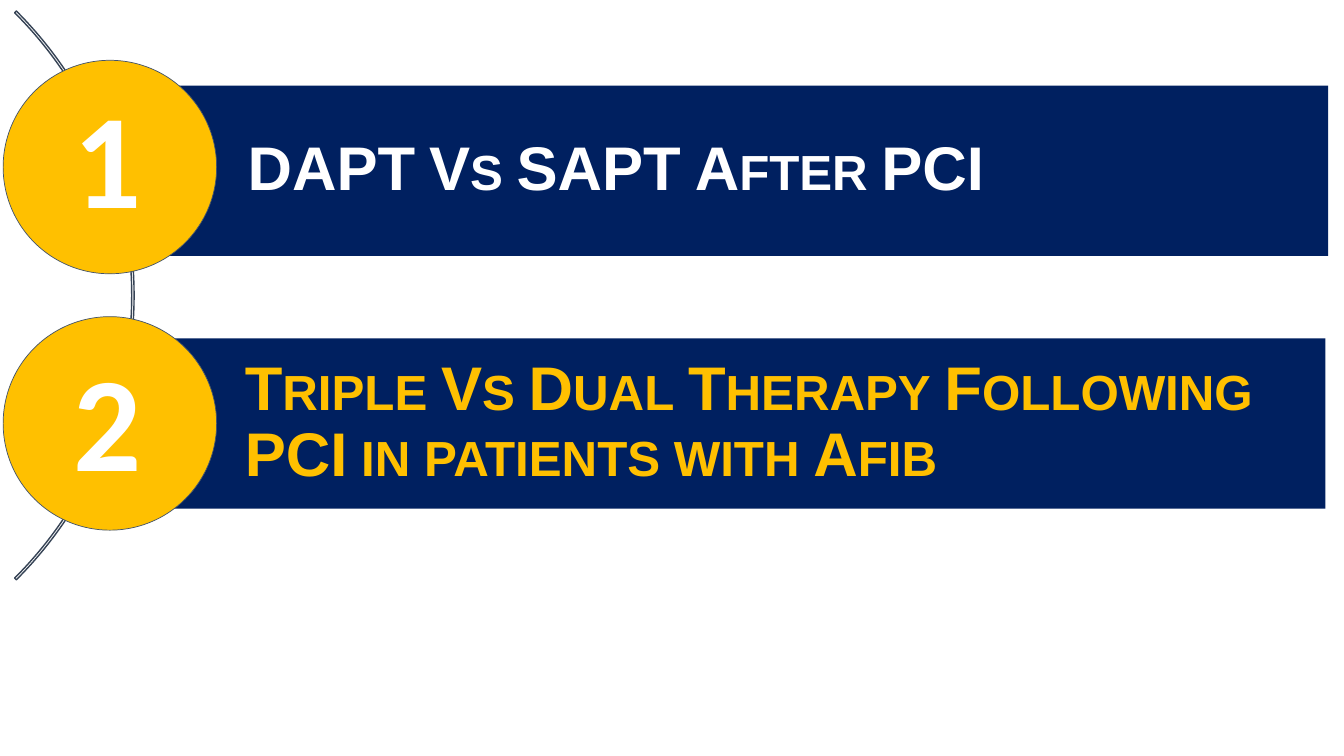
from dataclasses import dataclass

from pptx import Presentation
from pptx.dml.color import RGBColor
from pptx.enum.shapes import MSO_SHAPE
from pptx.enum.text import MSO_ANCHOR, PP_ALIGN
from pptx.shapes.autoshape import Shape
from pptx.slide import Slide
from pptx.text.text import TextFrame
from pptx.util import Cm, Pt

NAVY, GOLD, WHITE = "002060", "FFC000", "FFFFFF"
SLATE, STEEL = "44546A", "364355"


@dataclass
class Topic:
    mark: str
    title: str
    color: str
    left: float
    top: float
    disc: float
    digit: float
    width: float


TOPICS = [
    Topic("1", "DAPT Vs SAPT After PCI", WHITE, 2.84, 2.16, 1.52, 1.75, 1.85),
    Topic("2", "Triple Vs Dual Therapy Following PCI in patients with Afib",
          GOLD, 2.77, 8.53, 7.98, 8.36, 3.07),
]


def rgb(code: str) -> RGBColor:
    return RGBColor.from_string(code)


def draw(slide: Slide, kind: MSO_SHAPE, box: tuple[float, ...],
         fill: str | None, line: str | None = None, weight: float = 1) -> Shape:
    shape = slide.shapes.add_shape(kind, *map(Cm, box))
    shape.shadow.inherit = False
    if fill:
        shape.fill.solid()
        shape.fill.fore_color.rgb = rgb(fill)
    else:
        shape.fill.background()
    if line:
        shape.line.color.rgb = rgb(line)
        shape.line.width = Pt(weight)
    else:
        shape.line.fill.background()
    return shape


def write(frame: TextFrame, text: str, font: str, size: int, color: str,
          small: bool = False) -> None:
    frame.word_wrap = True
    para = frame.paragraphs[0]
    para.alignment = PP_ALIGN.LEFT
    if small:
        para.line_spacing = 0.9
    run = para.add_run()
    run.text = text
    run.font.name = font
    run.font.size = Pt(size)
    run.font.bold = True
    run.font.color.rgb = rgb(color)
    if small:
        run.font._element.set("cap", "small")


def add_topic(slide: Slide, topic: Topic) -> None:
    # Bar with its title
    bar = draw(slide, MSO_SHAPE.RECTANGLE,
               (topic.left, topic.top, 30.63, 4.29), NAVY)
    frame = bar.text_frame
    frame.vertical_anchor = MSO_ANCHOR.MIDDLE
    frame.margin_left = Cm(3.4)
    frame.margin_top = frame.margin_right = frame.margin_bottom = Cm(0.3)
    write(frame, topic.title, "Arial", 44, topic.color, small=True)

    # Disc with its number
    draw(slide, MSO_SHAPE.OVAL, (0.08, topic.disc, 5.38, 5.38), GOLD, SLATE, 0.5)
    label = slide.shapes.add_textbox(
        Cm(1.6), Cm(topic.digit), Cm(topic.width), Cm(4.37))
    write(label.text_frame, topic.mark, "Calibri", 96, WHITE)


def main() -> None:
    deck = Presentation()
    deck.slide_width, deck.slide_height = Cm(33.87), Cm(19.05)
    slide = deck.slides.add_slide(deck.slide_layouts[6])

    # Thin arc behind the discs
    arc = draw(slide, MSO_SHAPE.BLOCK_ARC, (-16.89, -2.69, 20.27, 20.27),
               None, STEEL)
    for index, value in enumerate((189, 27, 0.003)):
        arc.adjustments[index] = value

    for topic in TOPICS:
        add_topic(slide, topic)
    deck.save("out.pptx")


if __name__ == "__main__":
    main()
